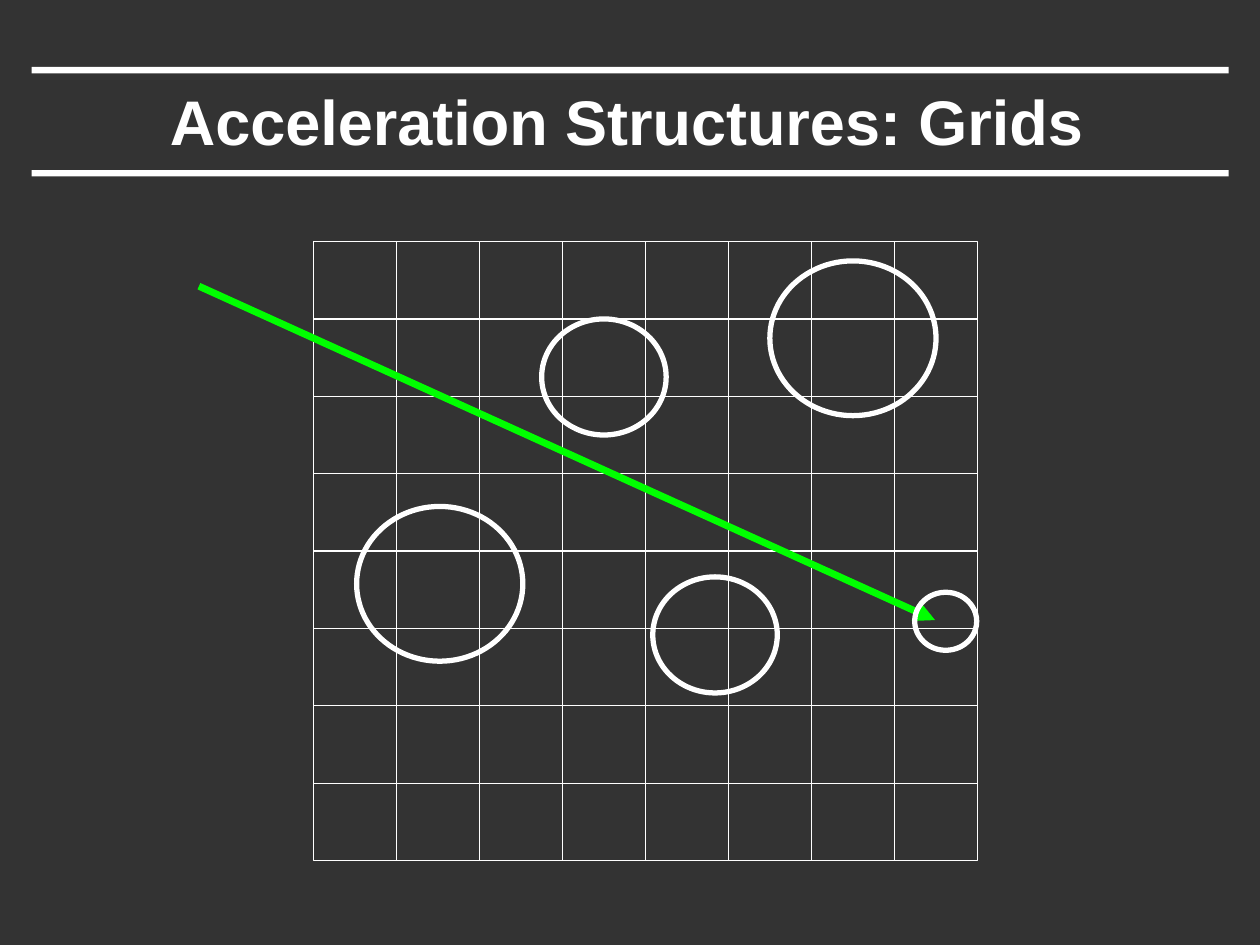
"""Build a slide showing a ray crossing a uniform grid of cells with spheres."""

from dataclasses import dataclass
from itertools import product

from lxml.etree import SubElement
from pptx import Presentation
from pptx.dml.color import RGBColor
from pptx.enum.shapes import MSO_CONNECTOR as Connector
from pptx.enum.shapes import MSO_SHAPE as Shape
from pptx.enum.text import MSO_ANCHOR as Anchor
from pptx.enum.text import PP_ALIGN as Align
from pptx.oxml.ns import qn
from pptx.slide import Slide
from pptx.util import Cm, Pt

BACKGROUND = RGBColor(0x33, 0x33, 0x33)
WHITE = RGBColor(0xFF, 0xFF, 0xFF)
RAY_GREEN = RGBColor(0x00, 0xFF, 0x00)

TITLE_FORMAT = {"name": "Arial", "size": Pt(36), "bold": True}
FRAME_FORMAT = {"word_wrap": True, "vertical_anchor": Anchor.MIDDLE}

GRID_COUNT = 8
GRID_LEFT, GRID_TOP = 6.32, 4.87
GRID_WIDTH, GRID_HEIGHT = 13.38, 12.48


@dataclass(frozen=True)
class Box:
    """Position and size in centimetres."""

    left: float
    top: float
    width: float
    height: float

    def lengths(self) -> tuple[Cm, Cm, Cm, Cm]:
        """Return the box as slide lengths."""
        return Cm(self.left), Cm(self.top), Cm(self.width), Cm(self.height)


TITLE_BOX = Box(1.88, 1.47, 21.51, 1.9)
RULES = [Box(0.64, top, 24.13, 0.13) for top in (3.43, 1.35)]
BACK_SPHERES = [Box(15.52, 5.26, 3.35, 3.12), Box(7.19, 10.21, 3.35, 3.12)]
FRONT_SPHERES = [
    Box(10.92, 6.43, 2.51, 2.34),
    Box(18.44, 11.94, 1.25, 1.17),
    Box(13.16, 11.63, 2.51, 2.34),
]


def grid_cells() -> list[Box]:
    """Return the equal cells of the grid, row by row."""
    width, height = GRID_WIDTH / GRID_COUNT, GRID_HEIGHT / GRID_COUNT
    return [
        Box(GRID_LEFT + column * width, GRID_TOP + row * height, width, height)
        for row, column in product(range(GRID_COUNT), repeat=2)
    ]


def apply_format(target: object, values: dict) -> None:
    """Set each named attribute on the target."""
    for name, value in values.items():
        setattr(target, name, value)


def draw_rule(slide: Slide, box: Box) -> None:
    """Draw a solid white bar."""
    shape = slide.shapes.add_shape(Shape.RECTANGLE, *box.lengths())
    shape.shadow.inherit = False
    shape.fill.solid()
    shape.fill.fore_color.rgb = WHITE
    shape.line.fill.background()


def draw_outline(slide: Slide, kind: Shape, box: Box, weight: float) -> None:
    """Draw an unfilled shape with a white outline."""
    shape = slide.shapes.add_shape(kind, *box.lengths())
    shape.shadow.inherit = False
    shape.fill.background()
    shape.line.color.rgb = WHITE
    shape.line.width = Pt(weight)


def draw_title(slide: Slide, text: str) -> None:
    """Write the centred slide title."""
    frame = slide.shapes.add_textbox(*TITLE_BOX.lengths()).text_frame
    apply_format(frame, FRAME_FORMAT)
    paragraph = frame.paragraphs[0]
    paragraph.alignment = Align.CENTER
    run = paragraph.add_run()
    run.text = text
    apply_format(run.font, TITLE_FORMAT)
    run.font.color.rgb = WHITE


def draw_ray(slide: Slide) -> None:
    """Draw the green ray with an arrowhead at its end."""
    ray = slide.shapes.add_connector(
        Connector.STRAIGHT, Cm(4.01), Cm(5.77), Cm(18.85), Cm(12.5)
    )
    ray.line.color.rgb = RAY_GREEN
    ray.line.width = Pt(4)
    SubElement(ray.line._get_or_add_ln(), qn("a:tailEnd"), type="triangle")
    SubElement(ray._element.spPr, qn("a:effectLst"))


def main() -> None:
    """Assemble and save the slide."""
    presentation = Presentation()
    presentation.slide_width, presentation.slide_height = Cm(25.4), Cm(19.05)
    slide = presentation.slides.add_slide(presentation.slide_layouts[6])
    slide.background.fill.solid()
    slide.background.fill.fore_color.rgb = BACKGROUND

    for rule in RULES:
        draw_rule(slide, rule)
    draw_title(slide, "Acceleration Structures: Grids")
    for sphere in BACK_SPHERES:
        draw_outline(slide, Shape.OVAL, sphere, 3)
    for cell in grid_cells():
        draw_outline(slide, Shape.RECTANGLE, cell, 0.75)
    draw_ray(slide)
    for sphere in FRONT_SPHERES:
        draw_outline(slide, Shape.OVAL, sphere, 3)

    presentation.save("out.pptx")


if __name__ == "__main__":
    main()
